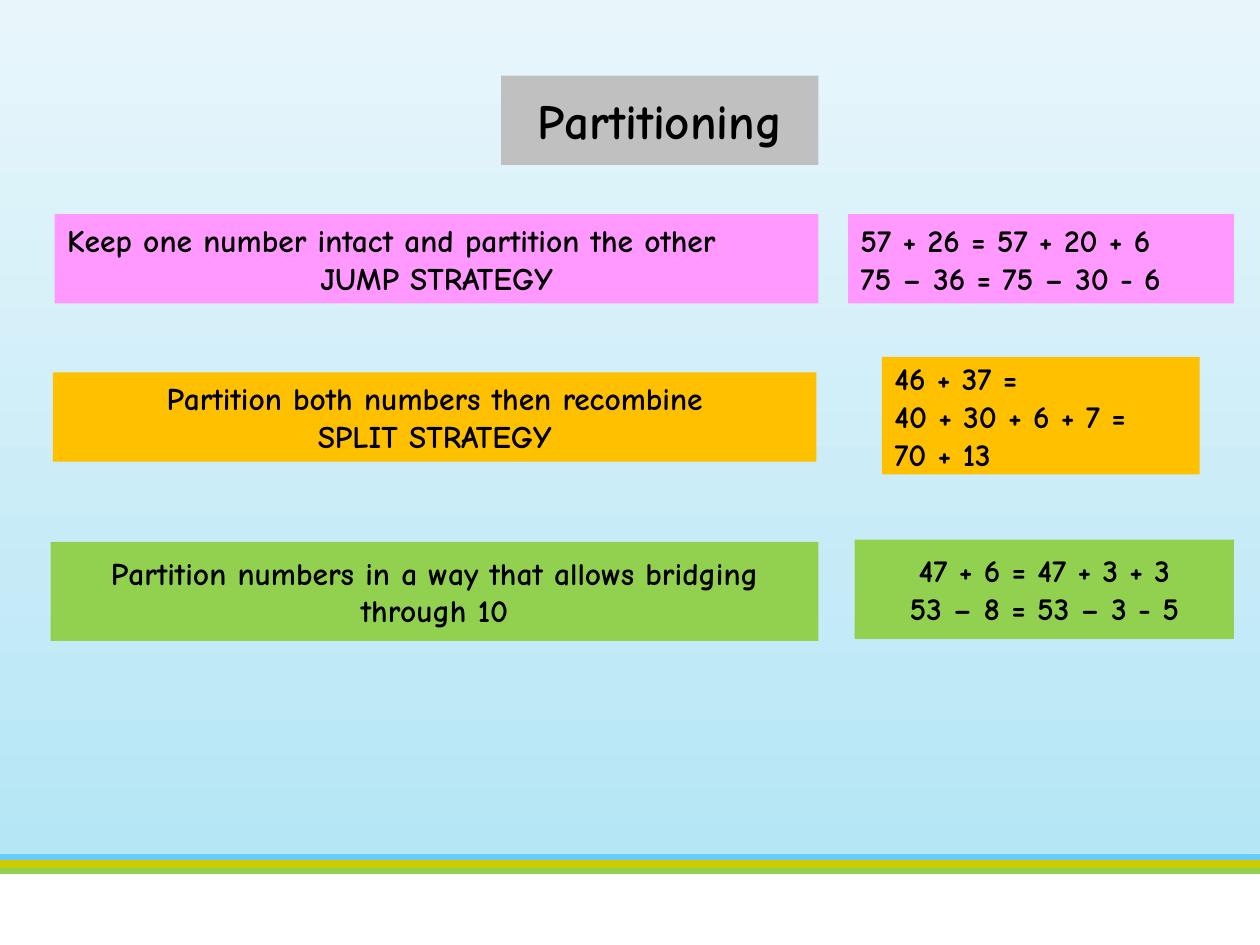
import pptx
import pptx.dml.color
import pptx.enum.shapes
import pptx.enum.text
import pptx.oxml
import pptx.util
from lxml import etree

Pt = pptx.util.Pt
RGBColor = pptx.dml.color.RGBColor
RECTANGLE = pptx.enum.shapes.MSO_SHAPE.RECTANGLE
LEFT = pptx.enum.text.PP_ALIGN.LEFT
CENTER = pptx.enum.text.PP_ALIGN.CENTER

BLACK = RGBColor(0x00, 0x00, 0x00)
GREY = RGBColor(0xC0, 0xC0, 0xC0)
PINK = RGBColor(0xFF, 0x99, 0xFF)
ORANGE = RGBColor(0xFF, 0xC0, 0x00)
GREEN = RGBColor(0x92, 0xD0, 0x50)
OLIVE = RGBColor(0xCC, 0xCC, 0x00)
BLUE = RGBColor(0x66, 0xCC, 0xFF)
SKY_LOW = RGBColor(0xB5, 0xE6, 0xF5)
SKY_HIGH = RGBColor(0xE8, 0xF6, 0xFB)

FONT = "Comic Neue"
SLIDE_WIDTH, SLIDE_HEIGHT = 720, 540
HORIZON = 490.3

TITLE = "Partitioning"
TITLE_BOX = (286.4, 43.2, 181.2, 51)
STRIPES = [(497, GREEN), (HORIZON, BLUE), (493.9, OLIVE)]

STRATEGIES = [
    (PINK, (31.2, 122.4, 436.4, 51),
     [("Keep one number intact and partition the other", LEFT),
      ("JUMP STRATEGY", CENTER)]),
    (ORANGE, (30.2, 212.8, 436.4, 51),
     [("Partition both numbers then recombine", CENTER),
      ("SPLIT STRATEGY", CENTER)]),
    (GREEN, (29, 309.6, 438.6, 56.7),
     [("Partition numbers in a way that allows bridging through 10", CENTER)]),
]
EXAMPLES = [
    (PINK, (484.6, 122.4, 220.5, 51),
     [("57 + 26 = 57 + 20 + 6", LEFT), ("75 – 36 = 75 – 30 - 6", LEFT)]),
    (ORANGE, (504, 203.9, 181.6, 67.2),
     [("46 + 37 =", LEFT), ("40 + 30 + 6 + 7 =", LEFT), ("70 + 13", LEFT)]),
    (GREEN, (488.4, 308.4, 216.7, 56.7),
     [("47 + 6 = 47 + 3 + 3", CENTER), ("53 – 8 = 53 – 3 - 5", CENTER)]),
]


def add_box(slide, box):
    panel = slide.shapes.add_shape(RECTANGLE, *map(Pt, box))
    panel.shadow.inherit = False
    panel.line.fill.background()
    return panel


def write(paragraph, text, *, size=18, align=CENTER, color=BLACK, bold=True):
    paragraph.text = text
    paragraph.alignment = align
    paragraph.font.name = FONT
    paragraph.font.size = Pt(size)
    paragraph.font.bold = bold
    paragraph.font.color.rgb = color


def prepare_frame(panel, fill):
    panel.fill.solid()
    panel.fill.fore_color.rgb = fill
    frame = panel.text_frame
    frame.word_wrap = True
    frame.auto_size = pptx.enum.text.MSO_AUTO_SIZE.NONE
    frame.vertical_anchor = pptx.enum.text.MSO_ANCHOR.MIDDLE
    return frame


def add_scenery(slide):
    sky = add_box(slide, (0, 0, SLIDE_WIDTH, HORIZON))
    sky.fill.gradient()
    sky.fill.gradient_angle = 90
    for stop, color in zip(sky.fill.gradient_stops, (SKY_LOW, SKY_HIGH)):
        stop.color.rgb = color
    for y, color in STRIPES:
        stripe = slide.shapes.add_connector(
            pptx.enum.shapes.MSO_CONNECTOR.STRAIGHT,
            Pt(0), Pt(y), Pt(SLIDE_WIDTH), Pt(y))
        stripe.line.color.rgb = color
        stripe.line.width = Pt(4.5)
        etree.SubElement(stripe.element.spPr, pptx.oxml.ns.qn("a:effectLst"))


def place_title(slide):
    title = slide.shapes.title
    slide.shapes.element.append(title.element)
    title.left, title.top, title.width, title.height = map(Pt, TITLE_BOX)
    write(prepare_frame(title, GREY).paragraphs[0], TITLE, size=28)


def main():
    deck = pptx.Presentation()
    deck.slide_width, deck.slide_height = Pt(SLIDE_WIDTH), Pt(SLIDE_HEIGHT)
    slide = deck.slides.add_slide(deck.slide_layouts[5])
    add_scenery(slide)
    place_title(slide)
    for fill, box, lines in STRATEGIES + EXAMPLES:
        frame = prepare_frame(add_box(slide, box), fill)
        for index, (text, align) in enumerate(lines):
            paragraph = frame.add_paragraph() if index else frame.paragraphs[0]
            write(paragraph, text, align=align)
    deck.save("out.pptx")


if __name__ == "__main__":
    main()
